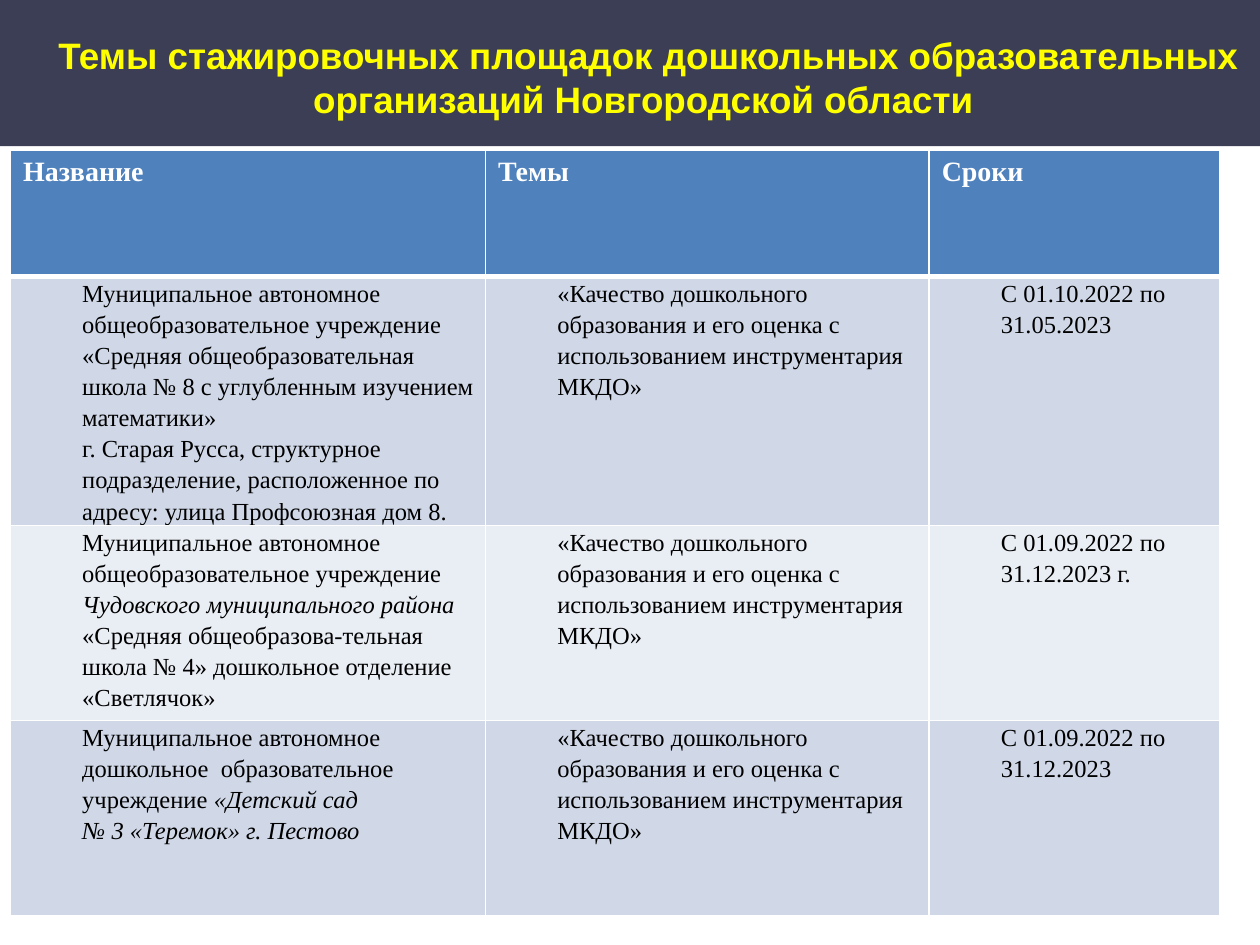
from typing import NamedTuple

from lxml import etree
from pptx import Presentation
from pptx.dml.color import RGBColor
from pptx.enum import shapes, text
from pptx.oxml.ns import qn
from pptx.util import Pt

NAVY, YELLOW, WHITE, BLACK = "3B3E54", "FFFF00", "FFFFFF", "000000"
HEAD_FILL, BAND_FILLS = "4F81BD", ("D0D8E8", "E9EDF4")
TITLE_FONT = dict(name="Arial", size=Pt(21), bold=True)
HEAD_FONT = dict(name="Times New Roman", size=Pt(16), bold=True)
BODY_FONT = dict(name="Times New Roman", size=Pt(14), bold=False)
COL_WIDTHS = (271.5, 253.5, 166)
HEAD_HEIGHT, ROW_HEIGHT = 72, 111.5


class Run(NamedTuple):
    text: str
    italic: bool = False


class Site(NamedTuple):
    name: list[list[Run]]  # paragraphs of runs
    term: str


HEADINGS = ("Название", "Темы", "Сроки")
TOPIC = ("«Качество дошкольного образования и его оценка "
         "с использованием инструментария МКДО»")
SITES = [
    Site([[Run("Муниципальное автономное общеобразовательное учреждение "
               "«Средняя общеобразовательная школа № 8 с углубленным "
               "изучением математики»")],
          [Run("г. Старая Русса, структурное подразделение, расположенное "
               "по адресу: улица Профсоюзная дом 8.")]],
         "С 01.10.2022 по 31.05.2023"),
    Site([[Run("Муниципальное автономное общеобразовательное учреждение "),
           Run("Чудовского муниципального района ", True),
           Run("«Средняя общеобразова-тельная школа № 4» "
               "дошкольное отделение «Светлячок»")]],
         "С 01.09.2022 по 31.12.2023 г."),
    Site([[Run("Муниципальное автономное")],
          [Run("дошкольное  образовательное учреждение "),
           Run("«Детский сад", True)],
          [Run("№ 3 «Теремок» г. Пестово", True)]],
         "С 01.09.2022 по 31.12.2023"),
]


def rgb(value: str) -> RGBColor:
    return RGBColor.from_string(value)


def set_font(font, values: dict, color: str) -> None:
    for key, value in values.items():
        setattr(font, key, value)
    font.color.rgb = rgb(color)


def set_fill(target, color: str) -> None:
    target.fill.solid()
    target.fill.fore_color.rgb = rgb(color)


def set_borders(cell, bottom: float) -> None:
    """Draw white cell borders; they must precede the fill in the XML."""
    tc_pr = cell._tc.get_or_add_tcPr()
    widths = {"a:lnL": 1, "a:lnR": 1, "a:lnT": 1, "a:lnB": bottom}
    for i, (tag, width) in enumerate(widths.items()):
        ln = etree.Element(qn(tag), w=str(Pt(width)))
        fill = etree.SubElement(ln, qn("a:solidFill"))
        etree.SubElement(fill, qn("a:srgbClr"), val=WHITE)
        tc_pr.insert(i, ln)


def fill_cell(cell, paragraphs: list[list[Run]], fill: str, header: bool) -> None:
    set_fill(cell, fill)
    set_borders(cell, 3 if header else 1)
    if not header:
        cell.margin_left = cell.margin_right = Pt(5)
        cell.margin_top = cell.margin_bottom = 0
    tf = cell.text_frame
    for i, runs in enumerate(paragraphs):
        p = tf.add_paragraph() if i else tf.paragraphs[0]
        if not header:
            p.line_spacing = 1.15
            p._p.get_or_add_pPr().set("marL", str(Pt(36)))
            p._p.get_or_add_pPr().set("indent", "0")
        for run in runs:
            r = p.add_run()
            r.text = run.text
            set_font(r.font, HEAD_FONT if header else BODY_FONT,
                     WHITE if header else BLACK)
            r.font.italic = run.italic


def add_band(slide) -> None:
    sp = slide.shapes.add_shape(shapes.MSO_SHAPE.RECTANGLE, 0, 0, Pt(720), Pt(83.5))
    sp.shadow.inherit = False
    set_fill(sp, NAVY)
    sp.line.fill.background()
    slide.shapes._spTree.insert(2, sp._element)  # behind the title


def format_title(sp) -> None:
    sp.left, sp.top, sp.width, sp.height = Pt(31), Pt(18.5), Pt(679), Pt(51)
    tf = sp.text_frame
    tf.margin_left = tf.margin_right = tf.margin_top = tf.margin_bottom = 0
    tf.word_wrap = True
    tf.auto_size = text.MSO_AUTO_SIZE.NONE
    tf.vertical_anchor = text.MSO_ANCHOR.MIDDLE
    p = tf.paragraphs[0]
    p.alignment = text.PP_ALIGN.CENTER
    r = p.add_run()
    r.text = ("Темы стажировочных площадок дошкольных образовательных "
              "организаций Новгородской области ")
    set_font(r.font, TITLE_FONT, YELLOW)


def add_sites_table(slide) -> None:
    height = HEAD_HEIGHT + ROW_HEIGHT * len(SITES)
    table = slide.shapes.add_table(
        len(SITES) + 1, len(HEADINGS), Pt(6), Pt(86),
        Pt(sum(COL_WIDTHS)), Pt(height)).table
    for column, width in zip(table.columns, COL_WIDTHS):
        column.width = Pt(width)
    for i, row in enumerate(table.rows):
        row.height = Pt(ROW_HEIGHT if i else HEAD_HEIGHT)
    for cell, heading in zip(table.rows[0].cells, HEADINGS):
        fill_cell(cell, [[Run(heading)]], HEAD_FILL, header=True)
    for i, site in enumerate(SITES):
        contents = (site.name, [[Run(TOPIC)]], [[Run(site.term)]])
        for cell, paragraphs in zip(table.rows[i + 1].cells, contents):
            fill_cell(cell, paragraphs, BAND_FILLS[i % 2], header=False)


def main() -> None:
    prs = Presentation()
    prs.slide_width, prs.slide_height = Pt(720), Pt(540)
    slide = prs.slides.add_slide(prs.slide_layouts[5])
    add_band(slide)
    format_title(slide.shapes.title)
    add_sites_table(slide)
    prs.save("out.pptx")


if __name__ == "__main__":
    main()
